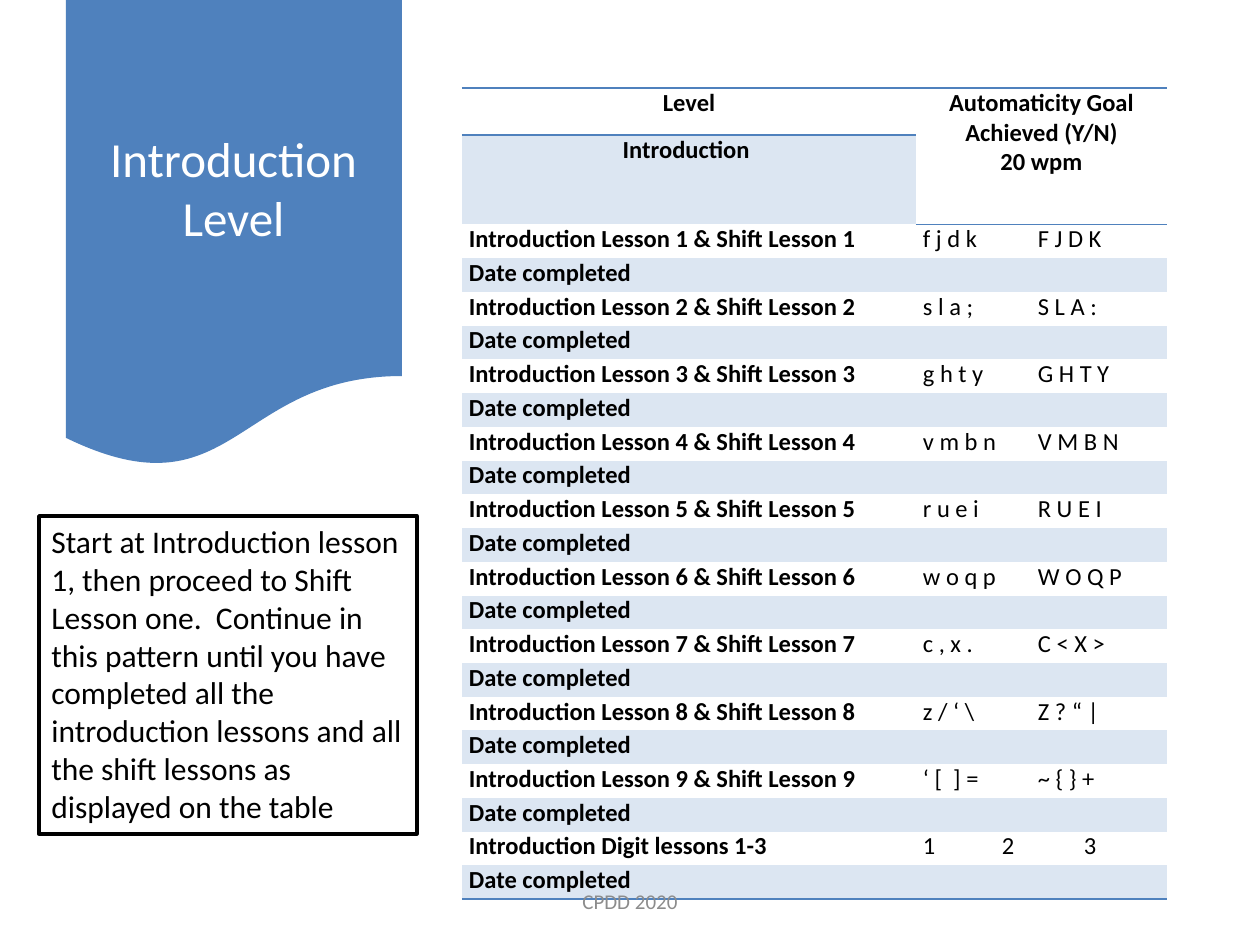
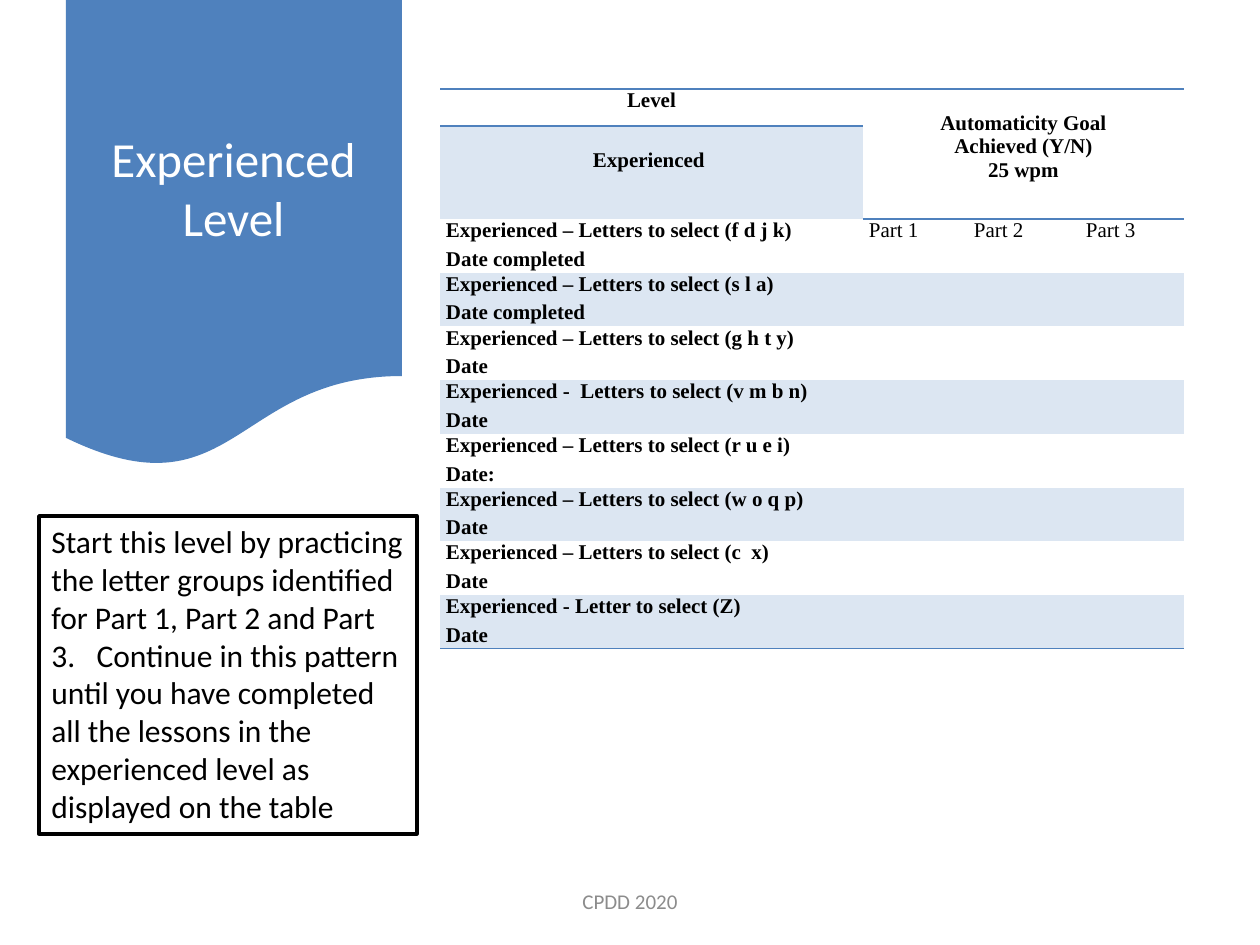
from lxml.etree import SubElement
from pptx import Presentation
from pptx.dml.color import RGBColor
from pptx.enum.shapes import MSO_SHAPE
from pptx.enum.text import MSO_ANCHOR, MSO_AUTO_SIZE, PP_ALIGN
from pptx.oxml.ns import qn
from pptx.util import Pt

COLORS = {"blue": "4F81BD", "band": "DCE6F2", "white": "FFFFFF",
          "black": "000000", "gray": "8C8C8C"}
PLAIN_TABLE = "{2D5ABB26-0587-4C30-8999-92F81FD0307C}"
FOOTER = "CPDD 2020"

KEY_GROUPS = [("f j d k", "F J D K"), ("s l a ;", "S L A :"),
              ("g h t y", "G H T Y"), ("v m b n", "V M B N"),
              ("r u e i", "R U E I"), ("w o q p", "W O Q P"),
              ("c , x .", "C < X >"), ("z / ‘ \\", "Z ? “ |"),
              ("‘ [  ] =", "~ { } +")]
LETTER_GROUPS = [("– Letters to select (f d j k)", "Date completed"),
                 ("– Letters to select (s l a)", "Date completed"),
                 ("– Letters to select (g h t y)", "Date"),
                 ("-  Letters to select (v m b n)", "Date"),
                 ("– Letters to select (r u e i)", "Date:"),
                 ("– Letters to select (w o q p)", "Date"),
                 ("– Letters to select (c  x)", "Date"),
                 ("- Letter to select (Z)", "Date")]

# Each body row is a list of label lines and the values beside it.
lesson_rows = []
for n, keys in enumerate(KEY_GROUPS, 1):
    lesson_rows += [([f"Introduction Lesson {n} & Shift Lesson {n}"], keys),
                    (["Date completed"], ("", ""))]
lesson_rows += [(["Introduction Digit lessons 1-3"], ("1", "2", "3")),
                (["Date completed"], ("", "", ""))]
letter_rows = [([f"Experienced {letters}", date],
                ("", "", "") if i else ("Part 1", "Part 2", "Part 3"))
               for i, (letters, date) in enumerate(LETTER_GROUPS)]

LEVELS = [
    {"title": "Introduction Level",
     "note": "Start at Introduction lesson 1, then proceed to Shift Lesson one.  "
             "Continue in this pattern until you have completed all the "
             "introduction lessons and all the shift lessons as displayed on the table",
     "level": "Introduction ",
     "goal": ["Automaticity Goal Achieved (Y/N)", "20 wpm"],
     "rows": lesson_rows, "at": (462, 88), "cols": [454, 79, 36, 46, 90],
     "head": [47, 89], "body": 675, "inset": 7, "head_drop": 0,
     "spans": {2: [(1, 2), (3, 4)], 3: [(1, 1), (2, 3), (4, 4)]},
     "font": {"font": "Calibri", "size": 14}, "before": 0},
    {"title": "Experienced Level",
     "note": "Start this level by practicing the letter groups identified for "
             "Part 1, Part 2 and Part 3.   Continue in this pattern until you "
             "have completed all the lessons in the experienced level as  "
             "displayed on the table",
     "level": "Experienced ",
     "goal": ["Automaticity Goal", "Achieved (Y/N)", "25 wpm"],
     "rows": letter_rows, "at": (440, 89), "cols": [423, 105, 112, 104],
     "head": [37, 93], "body": 430, "inset": 6, "head_drop": 23,
     "spans": {3: [(1, 1), (2, 2), (3, 3)]},
     "font": {"font": "Times New Roman", "size": 12}, "before": 3},
]


def px(n):
    return round(n * 914400 / 126)


def color(name):
    return RGBColor.from_string(COLORS[name])


def write(tf, lines, font="Calibri", size=18, ink="black", bold=False,
          align=PP_ALIGN.LEFT, before=0):
    """Fill a text frame, one paragraph per line; empty lines keep their size."""
    tf.word_wrap = True
    for i, line in enumerate(lines):
        p = tf.add_paragraph() if i else tf.paragraphs[0]
        p.alignment = align
        p.space_before = Pt(before)
        if not line:
            SubElement(p._p, qn("a:endParaRPr"), sz=str(size * 100))
            continue
        r = p.add_run()
        r.text = line
        r.font.name, r.font.size, r.font.bold = font, Pt(size), bold
        r.font.color.rgb = color(ink)


def add_border(cell, side):
    ln = SubElement(cell._tc.get_or_add_tcPr(), qn(f"a:ln{side}"), w=str(Pt(1)))
    fill = SubElement(ln, qn("a:solidFill"))
    SubElement(fill, qn("a:srgbClr"), val=COLORS["blue"])


def add_box(slide, kind, at, fill):
    sp = slide.shapes.add_shape(kind, *map(px, at))
    sp.shadow.inherit = False
    sp.fill.solid()
    sp.fill.fore_color.rgb = color(fill)
    sp.line.fill.background()
    return sp


def style_cells(table, inset):
    """Set margins, rules and bands for every cell."""
    last = len(table.rows) - 1
    for i, row in enumerate(table.rows):
        for j, cell in enumerate(row.cells):
            cell.margin_left = cell.margin_right = px(inset)
            cell.margin_top = cell.margin_bottom = 0
            if i == 0:
                add_border(cell, "T")
            if i in (0, last) or (i == 1 and j):
                add_border(cell, "B")
            if i % 2 and (i > 1 or j == 0):
                cell.fill.solid()
                cell.fill.fore_color.rgb = color("band")
            else:
                cell.fill.background()


def add_level_table(slide, level):
    rows, cols, font = level["rows"], level["cols"], level["font"]
    heights = level["head"] + [level["body"] / len(rows)] * len(rows)
    frame = slide.shapes.add_table(len(heights), len(cols), *map(px, level["at"]),
                                   px(sum(cols)), px(sum(heights)))
    table = frame.table
    table.first_row = table.horz_banding = False
    table._tbl.tblPr.find(qn("a:tableStyleId")).text = PLAIN_TABLE
    for row, height in zip(table.rows, heights):
        row.height = px(height)
    for col, width in zip(table.columns, cols):
        col.width = px(width)
    style_cells(table, level["inset"])

    texts = {(0, 0): ["Level"], (0, 1): level["goal"], (1, 0): [level["level"]]}
    table.cell(0, 1).merge(table.cell(1, len(cols) - 1))
    for pos in ((0, 1), (1, 0)):
        table.cell(*pos).margin_top = px(level["head_drop"])
    for i, (label, values) in enumerate(rows, 2):
        texts[i, 0] = label
        for value, (first, end) in zip(values, level["spans"][len(values)]):
            texts[i, first] = [value]
            if end > first:
                table.cell(i, first).merge(table.cell(i, end))
    for i in range(len(heights)):
        for j in range(len(cols)):
            head = i < 2
            write(table.cell(i, j).text_frame, texts.get((i, j), [""]),
                  bold=head or j == 0,
                  align=PP_ALIGN.CENTER if head else PP_ALIGN.LEFT,
                  before=0 if head else level["before"], **font)


def add_level_slide(prs, level):
    slide = prs.slides.add_slide(prs.slide_layouts[5])
    title = slide.shapes.title
    banner = add_box(slide, MSO_SHAPE.FLOWCHART_DOCUMENT, (66, 0, 336, 469), "blue")
    title._element.addprevious(banner._element)
    title.left, title.top, title.width, title.height = map(px, (87, 24, 293, 326))
    tf = title.text_frame
    tf.auto_size = MSO_AUTO_SIZE.NONE
    tf.vertical_anchor = MSO_ANCHOR.MIDDLE
    write(tf, [level["title"]], size=28, ink="white", align=PP_ALIGN.CENTER)

    add_level_table(slide, level)

    note = add_box(slide, MSO_SHAPE.RECTANGLE, (39, 516, 378, 318), "white")
    note.line.color.rgb = color("black")
    note.line.width = Pt(2)
    note.text_frame.vertical_anchor = MSO_ANCHOR.TOP
    write(note.text_frame, [level["note"]])

    footer = slide.shapes.add_textbox(*map(px, (430, 876, 400, 50)))
    footer.text_frame.vertical_anchor = MSO_ANCHOR.MIDDLE
    write(footer.text_frame, [FOOTER], size=12, ink="gray", align=PP_ALIGN.CENTER)


def main():
    prs = Presentation()
    prs.slide_width, prs.slide_height = px(1260), px(945)
    for level in LEVELS:
        add_level_slide(prs, level)
    prs.save("out.pptx")


if __name__ == "__main__":
    main()
